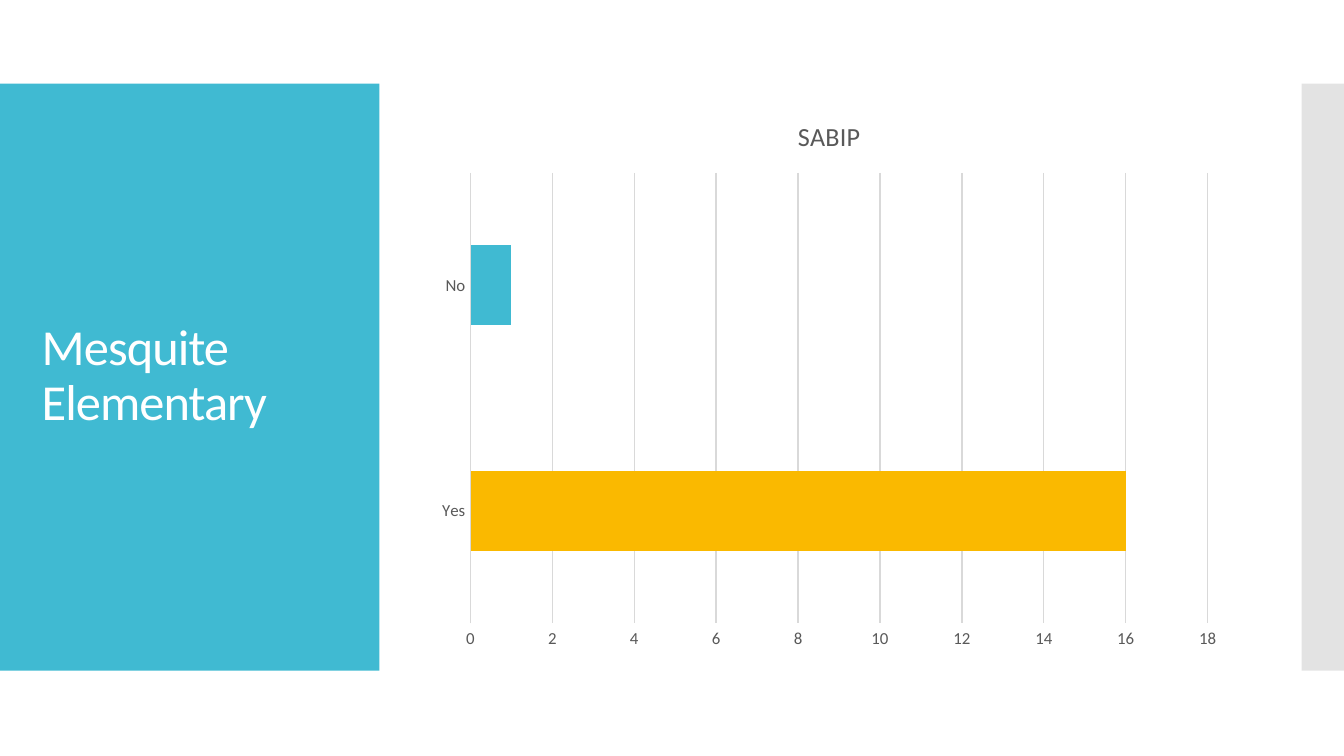
from lxml import etree
from pptx import Presentation
from pptx.chart.data import CategoryChartData
from pptx.dml.color import RGBColor
from pptx.enum.chart import XL_CHART_TYPE, XL_TICK_MARK
from pptx.enum.shapes import MSO_SHAPE
from pptx.enum.text import MSO_ANCHOR
from pptx.oxml.ns import qn
from pptx.util import Cm, Pt

TEAL = RGBColor(0x40, 0xBA, 0xD2)
AMBER = RGBColor(0xFA, 0xB9, 0x00)
SILVER = RGBColor(0xC8, 0xC8, 0xC8)
GRID_GREY = RGBColor(0xD9, 0xD9, 0xD9)
TEXT_GREY = RGBColor(0x59, 0x59, 0x59)
WHITE = RGBColor(0xFF, 0xFF, 0xFF)
FONT = "Calibri"
RECTANGLE = MSO_SHAPE.RECTANGLE
MIDDLE = MSO_ANCHOR.MIDDLE
BAR_CLUSTERED = XL_CHART_TYPE.BAR_CLUSTERED
NO_TICK = XL_TICK_MARK.NONE


def style_font(font, size, color):
    font.name = FONT
    font.size = Pt(size)
    font.bold = False
    font.color.rgb = color


deck = Presentation()
deck.slide_width = Cm(25.4)
deck.slide_height = Cm(14.29)
page = deck.slides.add_slide(deck.slide_layouts[6])

# Side panels
for left, width, color in ((0, 7.17, TEAL), (24.6, 0.8, SILVER)):
    panel = page.shapes.add_shape(RECTANGLE, Cm(left), Cm(1.58), Cm(width), Cm(11.1))
    panel.shadow.inherit = False
    panel.fill.solid()
    panel.fill.fore_color.rgb = color
    panel.line.fill.background()

# Half transparency on the right panel
tint = panel._element.spPr.find(qn("a:solidFill")).find(qn("a:srgbClr"))
etree.SubElement(tint, qn("a:alpha")).set("val", "50000")

# Title
box = page.shapes.add_textbox(Cm(0.54), Cm(2.33), Cm(6.14), Cm(9.58))
frame = box.text_frame
frame.word_wrap = True
frame.vertical_anchor = MIDDLE
frame.text = "Mesquite Elementary"
para = frame.paragraphs[0]
para.line_spacing = 0.9
span = para.runs[0]
style_font(span.font, 27, WHITE)
span.font._element.set("spc", "-50")

# Bar chart
data = CategoryChartData()
data.categories = ["Yes", "No"]
data.add_series("Series 1", (16, 1))
chart = page.shapes.add_chart(
    BAR_CLUSTERED, Cm(8.05), Cm(1.8), Cm(15.24), Cm(10.67), data
).chart
chart.font.name = FONT
chart.font.size = Pt(10)
chart.has_legend = False
chart.has_title = True
title = chart.chart_title.text_frame
title.text = "SABIP"
style_font(title.paragraphs[0].runs[0].font, 14, TEXT_GREY)
chart.chart_title.include_in_layout = False

# Bars
plot = chart.plots[0]
plot.gap_width = 182
plot.vary_by_categories = False
bars = plot.series[0]
for fill, color in ((bars.format.fill, TEAL), (bars.points[0].format.fill, AMBER)):
    fill.solid()
    fill.fore_color.rgb = color

# Axes and gridlines
category_axis, value_axis = chart.category_axis, chart.value_axis
for axis in (category_axis, value_axis):
    axis.major_tick_mark = NO_TICK
    axis.minor_tick_mark = NO_TICK
    style_font(axis.tick_labels.font, 9, TEXT_GREY)
value_axis.format.line.fill.background()
value_axis.has_major_gridlines = True
for line in (category_axis.format.line, value_axis.major_gridlines.format.line):
    line.color.rgb = GRID_GREY
    line.width = Pt(0.75)

deck.save("out.pptx")
